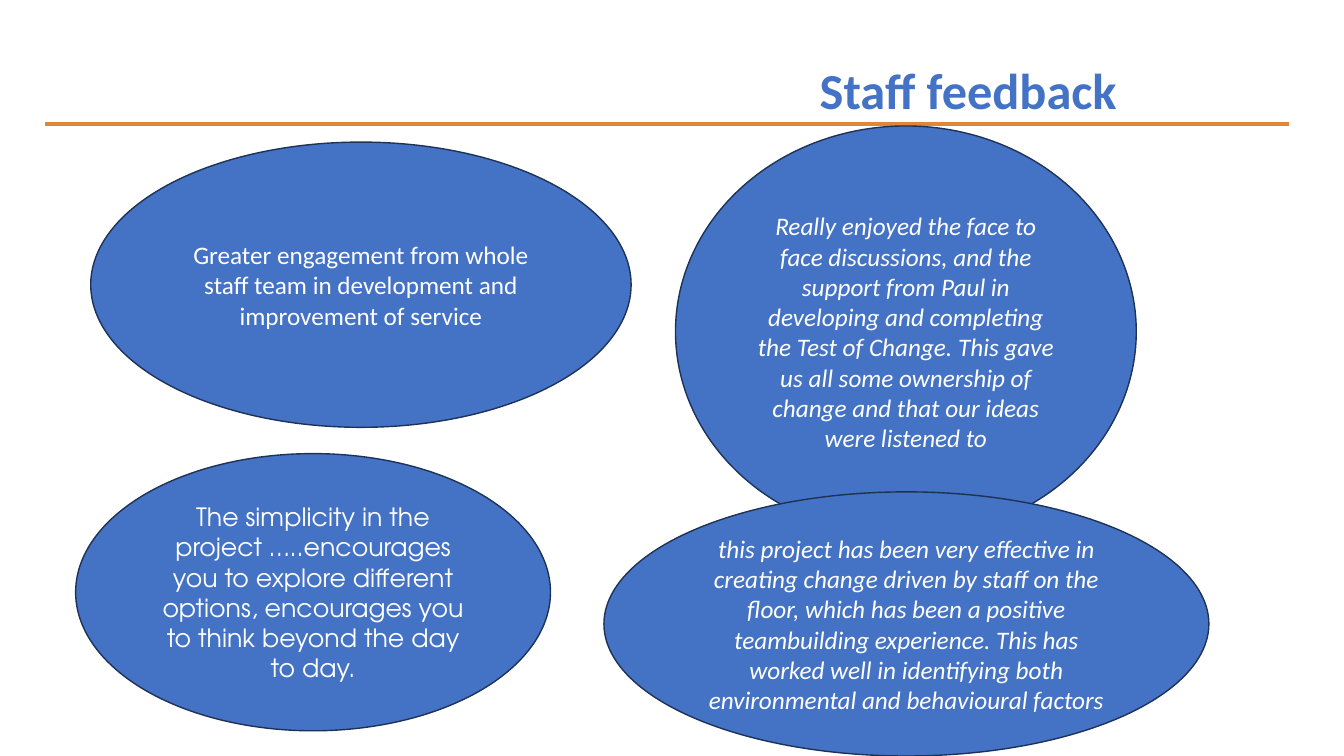
from lxml import etree
from pptx import Presentation
from pptx.dml.color import RGBColor
from pptx.enum import shapes, text
from pptx.oxml import ns
from pptx.util import Inches, Pt

COLORS = {"blue": "4472C4", "edge": "1E3256", "rule": "DF8638", "white": "FFFFFF"}
QUOTES = [
    ((6.7, 1.25, 4.57, 4.08),
     "Really enjoyed the face to face discussions, and the support from Paul in "
     "developing and completing the Test of Change. This gave us all some ownership "
     "of change and that our ideas were listened to", {"italic": True}),
    ((5.99, 4.88, 6, 2.62),
     "this project has been very effective in creating change driven by staff on the "
     "floor, which has been a positive teambuilding experience. This has worked well "
     "in identifying both environmental and behavioural factors", {"italic": True}),
    ((0.75, 4.5, 4.71, 2.75),
     "The simplicity in the project …..encourages you to explore different options, "
     "encourages you to think beyond the day to day.", {"face": "TeX Gyre Adventor"}),
    ((0.9, 1.41, 5.36, 2.83),
     "Greater engagement from whole staff team in development and improvement of "
     "service", {}),
]


def color(name):
    """Return the named colour."""
    return RGBColor.from_string(COLORS[name])


def write(frame, words, size=18, face="Calibri", ink="white", bold=False,
          italic=False, align=text.PP_ALIGN.CENTER,
          anchor=text.MSO_ANCHOR.MIDDLE, wrap=True):
    """Fill a text frame with one formatted paragraph."""
    frame.word_wrap = wrap
    frame.vertical_anchor = anchor
    para = frame.paragraphs[0]
    para.alignment = align
    run = para.add_run()
    run.text = words
    font = run.font
    font.size, font.name = Pt(size), face
    font.bold, font.italic = bold, italic
    font.color.rgb = color(ink)


def header(slide, box):
    """Place the title and the rule beneath it."""
    left, top, width, height = box
    base = Inches(top + height)
    rule = slide.shapes.add_connector(
        shapes.MSO_CONNECTOR.STRAIGHT, Inches(left), base, Inches(left + width), base)
    rule.line.color.rgb = color("rule")
    rule.line.width = Pt(2.25)
    etree.SubElement(rule._element.spPr, ns.qn("a:effectLst"))
    title = slide.shapes.title
    title.left, title.top = Inches(left + 7.58), Inches(top)
    title.width, title.height = Inches(3.2), Inches(0.71)
    frame = title.text_frame
    write(frame, "Staff feedback", size=36, ink="blue", bold=True,
          align=text.PP_ALIGN.LEFT, anchor=text.MSO_ANCHOR.TOP, wrap=False)
    frame.auto_size = text.MSO_AUTO_SIZE.SHAPE_TO_FIT_TEXT


def bubble(slide, box, words, **style):
    """Place one quote in an ellipse."""
    oval = slide.shapes.add_shape(shapes.MSO_SHAPE.OVAL, *map(Inches, box))
    oval.shadow.inherit = False
    oval.fill.solid()
    oval.fill.fore_color.rgb = color("blue")
    oval.line.color.rgb = color("edge")
    oval.line.width = Pt(1)
    write(oval.text_frame, words, **style)


def main():
    """Build and save the slide."""
    deck = Presentation()
    deck.slide_width, deck.slide_height = Inches(13.33), Inches(7.5)
    slide = deck.slides.add_slide(deck.slide_layouts.get_by_name("Title Only"))
    header(slide, (0.45, 0.54, 12.33, 0.69))
    for box, words, style in QUOTES:
        bubble(slide, box, words, **style)
    deck.save("out.pptx")


if __name__ == "__main__":
    main()
